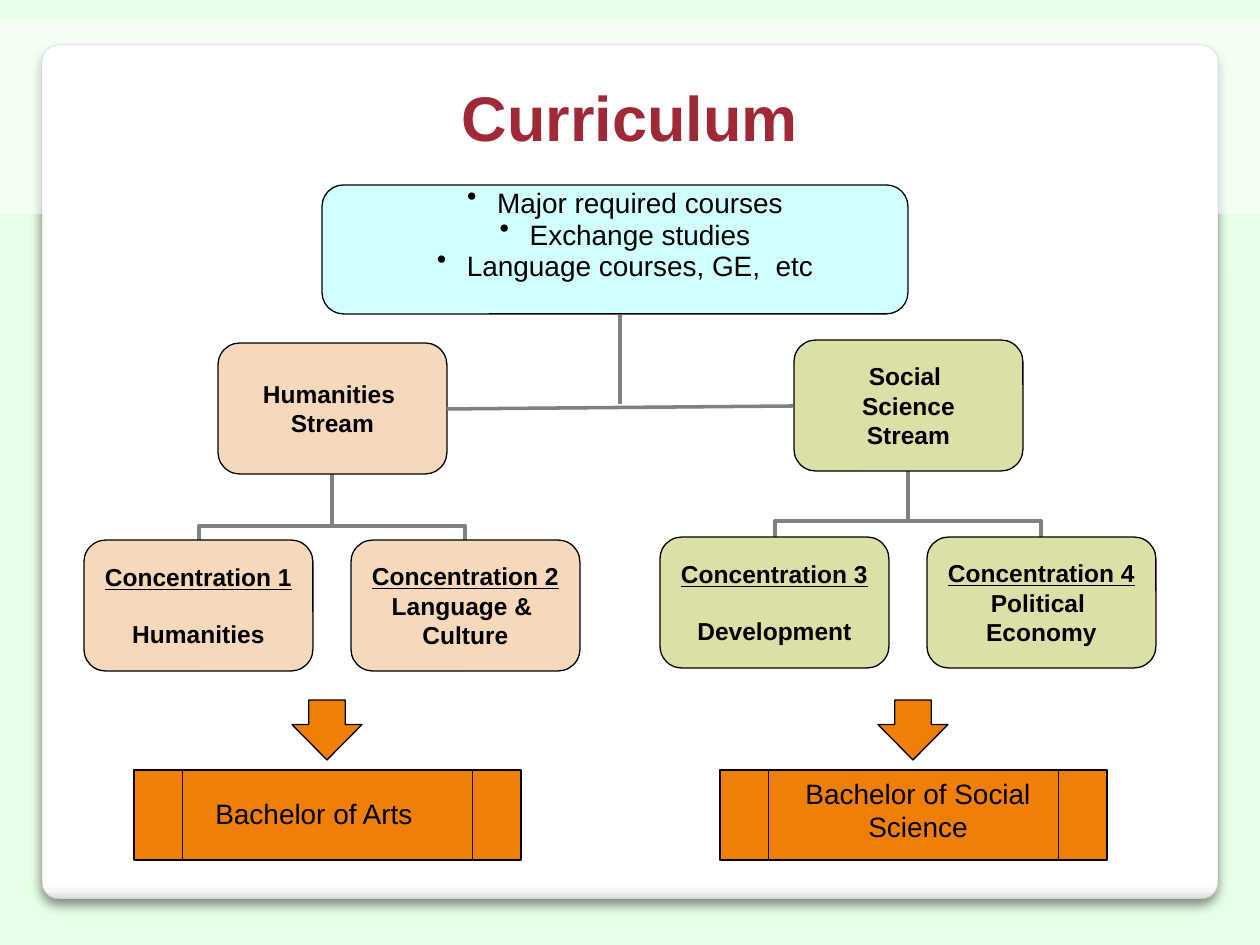
from lxml.etree import SubElement
from pptx import Presentation
from pptx.dml.color import RGBColor
from pptx.enum.shapes import MSO_CONNECTOR as Wire, MSO_SHAPE as Kind
from pptx.enum.text import MSO_ANCHOR as Anchor, PP_ALIGN as Align
from pptx.oxml.ns import qn
from pptx.util import Emu, Pt

CYAN, PEACH, OLIVE = "CCFFFF", "F4CFAA", "D1D68A"
ORANGE, BLACK, GRAY, WHITE = "F07F09", "000000", "808080", "FFFFFF"


def px(n):
    """Turn pixels into EMU."""
    return Emu(round(n * 914400 / 126))


def color(code):
    """Turn a hex string into a colour."""
    return RGBColor.from_string(code)


def node(root, tag, **attrs):
    """Add an XML child with its attributes."""
    return SubElement(root, qn(tag), {k: str(v) for k, v in attrs.items()})


def paint(shape, code, alpha=100):
    """Fill a shape with a colour of some opacity."""
    shape.fill.solid()
    shape.fill.fore_color.rgb = color(code)
    if alpha < 100:
        tint = shape._element.spPr.find(qn("a:solidFill"))[0]
        node(tint, "a:alpha", val=alpha * 1000)


def write(frame, text, size=14, code=BLACK, bold=False, under=False,
          align=Align.CENTER, before=0, space=None, hang=0):
    """Add one formatted paragraph to a text frame."""
    para = frame.paragraphs[0]
    if para.text:
        para = frame.add_paragraph()
        para.space_before = Pt(before)
    para.alignment = align
    if space:
        para.line_spacing = space
    if hang:
        prop = para._p.get_or_add_pPr()
        prop.set("marL", str(px(hang)))
        prop.set("indent", str(-px(hang)))
        node(prop, "a:buChar", char="•")
    run = para.add_run()
    run.text = text
    font = run.font
    font.name, font.size, font.bold = "Arial", Pt(size), bold
    font.underline = under
    font.color.rgb = color(code)


class Board:
    """Hold the style and the current slide."""

    def __init__(self, deck, back):
        """Add a title-only slide with a plain background."""
        self.slide = deck.slides.add_slide(deck.slide_layouts[5])
        self.items = self.slide.shapes
        fill = self.slide.background.fill
        fill.solid()
        fill.fore_color.rgb = color(back)

    def shape(self, kind, x, y, w, h, fill, alpha=100, edge=BLACK, width=0.75):
        """Add a filled and outlined preset shape."""
        item = self.items.add_shape(kind, px(x), px(y), px(w), px(h))
        item.shadow.inherit = False
        paint(item, fill, alpha)
        item.line.color.rgb = color(edge)
        item.line.width = Pt(width)
        return item

    def panel(self, x, y, w, h):
        """Add the white card with a shaded foot and a soft shadow."""
        item = self.shape(Kind.ROUNDED_RECTANGLE, x, y, w, h, WHITE,
                          edge="A4A4A4", width=0.16)
        item.adjustments[0] = 0.02
        item.fill.gradient()
        item.fill.gradient_angle = 270
        prop = item._element.spPr
        stops = prop.find(".//" + qn("a:gsLst"))
        stops[:] = []
        for pos, code in (0, WHITE), (98, WHITE), (99, "F7F7F7"), (100, "DADADA"):
            stop = node(stops, "a:gs", pos=pos * 1000)
            node(stop, "a:srgbClr", val=code)
        cast = node(prop.find(qn("a:effectLst")), "a:outerShdw",
                    blurRad=Pt(6), dist=Pt(4), dir=5400000, rotWithShape=0)
        node(node(cast, "a:srgbClr", val=BLACK), "a:alpha", val=25000)

    def title(self, text, x, y, w, h):
        """Place the title on its pale band above the card."""
        item = self.items.title
        self.items._spTree.append(item._element)
        item.left, item.top, item.width, item.height = map(px, (x, y, w, h))
        paint(item, WHITE, 50)
        item.text_frame.vertical_anchor = Anchor.MIDDLE
        write(item.text_frame, text, size=36, code="9F2936", bold=True)

    def node(self, x, y, lines, fill, alpha):
        """Add a box of the tree with bold lines."""
        item = self.shape(Kind.ROUNDED_RECTANGLE, x, y, 229, 131, fill, alpha)
        frame = item.text_frame
        frame.word_wrap = False
        frame.vertical_anchor = Anchor.MIDDLE
        frame.margin_left = frame.margin_right = 0
        frame.margin_top = frame.margin_bottom = 0
        head = lines[0].startswith("Concentration")
        gap = 16 if head and len(lines) == 2 else 0
        for i, line in enumerate(lines):
            write(frame, line, bold=True, under=head and i == 0, before=gap)

    def label(self, x, y, w, h, lines, **form):
        """Add a text box with one paragraph per line."""
        frame = self.items.add_textbox(px(x), px(y), px(w), px(h)).text_frame
        frame.word_wrap = True
        for line in lines:
            write(frame, line, size=16, **form)

    def line(self, x1, y1, x2, y2, kind=Wire.STRAIGHT, width=2):
        """Add a gray connector."""
        item = self.items.add_connector(kind, px(x1), px(y1), px(x2), px(y2))
        item.line.color.rgb = color(GRAY)
        item.line.width = Pt(width)
        node(item._element.spPr, "a:effectLst")
        return item

    def elbow(self, x1, y1, x2, y2, bend):
        """Add a connector that leaves upward and bends near its start."""
        mx, my = (x1 + x2) / 2, (y1 + y2) / 2
        dx, dy = (y1 - y2) / 2, abs(x1 - x2) / 2
        flip = x1 > x2
        side = dx if flip else -dx
        item = self.line(mx + side, my - dy, mx - side, my + dy, Wire.ELBOW, 2.25)
        prop = item._element.spPr
        prop.find(qn("a:xfrm")).set("rot", str((90 if flip else 270) * 60000))
        geom = prop.find(qn("a:prstGeom"))
        vals = geom.find(qn("a:avLst"))
        if vals is None:
            vals = node(geom, "a:avLst")
        node(vals, "a:gd", name="adj1", fmla=f"val {bend * 1000}")

    def tree(self, x, y, fill, alpha, bend, top, left, right):
        """Add a stream with its two concentrations."""
        mid, low = x + 248, y + 197
        for end in mid + 133, mid - 133:
            self.elbow(end, low, mid, y + 131, bend)
        self.node(x + 134, y, top, fill, alpha)
        self.node(x, low, left, fill, alpha)
        self.node(x + 267, low, right, fill, alpha)


def main():
    """Build the curriculum slide."""
    deck = Presentation()
    deck.slide_width, deck.slide_height = px(1260), px(945)
    board = Board(deck, "E7FFE7")
    for _ in range(2):
        board.panel(42, 45, 1176, 854)
    board.title("Curriculum", 0, 19, 1260, 195)

    board.tree(84, 343, PEACH, 80, 21, ["Humanities ", "Stream"],
               ["Concentration 1", "Humanities"],
               ["Concentration 2", "Language & ", "Culture"])
    board.tree(660, 340, OLIVE, 75, 24, ["Social ", "Science", "Stream"],
               ["Concentration 3", "Development"],
               ["Concentration 4", "Political ", "Economy"])
    board.line(447, 409, 793, 406)
    board.line(620, 315, 620, 404)

    for x in 134, 720:
        board.shape(Kind.FLOWCHART_PREDEFINED_PROCESS, x, 770, 387, 90, ORANGE)
        arrow = board.shape(Kind.DOWN_ARROW, x + 158, 700, 70, 60, ORANGE)
        arrow.adjustments[0], arrow.adjustments[1] = 0.52, 0.59
    board.label(203, 790, 258, 50, ["Bachelor of Arts"], align=Align.LEFT)
    board.label(789, 770, 258, 88, ["Bachelor of Social Science"])

    board.shape(Kind.ROUNDED_RECTANGLE, 322, 185, 586, 129, CYAN, 90)
    board.label(406, 194, 438, 108, ["Major required courses", "Exchange studies",
                                     "Language courses, GE,  etc"],
                before=8.4, space=0.5, hang=30)
    deck.save("out.pptx")


if __name__ == "__main__":
    main()
